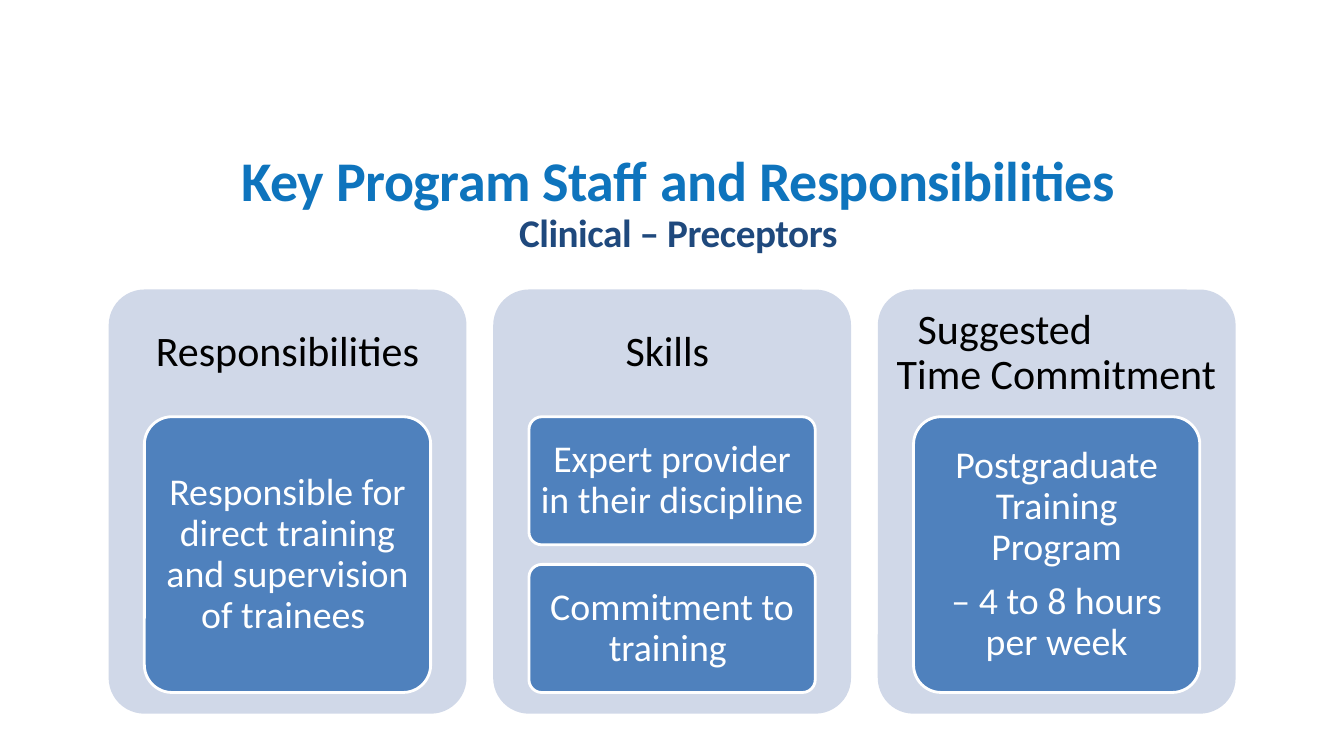
from pptx import Presentation
from pptx.dml.color import RGBColor
from pptx.enum.shapes import MSO_SHAPE
from pptx.enum.text import MSO_ANCHOR, PP_ALIGN
from pptx.util import Pt

ROUND = MSO_SHAPE.ROUNDED_RECTANGLE
MIDDLE, TOP = MSO_ANCHOR.MIDDLE, MSO_ANCHOR.TOP
CENTER, LEFT = PP_ALIGN.CENTER, PP_ALIGN.LEFT
BLUE = RGBColor(0x0E, 0x74, 0xBD)
NAVY = RGBColor(0x1F, 0x49, 0x7D)
PALE = RGBColor(0xD0, 0xD8, 0xE8)
STEEL = RGBColor(0x4F, 0x81, 0xBD)
BLACK = RGBColor(0, 0, 0)
WHITE = RGBColor(0xFF, 0xFF, 0xFF)

PANELS = [
    (["Responsibilities"],
     [["Responsible for direct training and supervision of trainees "]]),
    (["Skills "],
     [["Expert provider in their discipline "], ["Commitment to training "]]),
    (["Suggested", "Time Commitment"],
     [["Postgraduate Training Program", "– 4 to 8 hours per week"]]),
]


def add_run(para, text, size, color, bold=False):
    """Add one styled run to a paragraph."""
    run = para.add_run()
    run.text = text
    font = run.font
    font.name, font.size, font.bold = "Calibri", Pt(size), bold
    font.color.rgb = color
    return run


def set_frame(shape, anchor, side, edge):
    """Set wrapping, anchor and insets, and return the text frame."""
    frame = shape.text_frame
    frame.word_wrap = True
    frame.vertical_anchor = anchor
    frame.margin_left = frame.margin_right = Pt(side)
    frame.margin_top = frame.margin_bottom = Pt(edge)
    return frame


def set_para(para, align=CENTER):
    """Align a paragraph and tighten its lines."""
    para.alignment = align
    para.line_spacing = 0.9


def add_round(slide, box, fill):
    """Draw a rounded box without a line."""
    shape = slide.shapes.add_shape(ROUND, *map(Pt, box))
    shape.adjustments[0] = 0.1
    shape.shadow.inherit = False
    shape.fill.solid()
    shape.fill.fore_color.rgb = fill
    shape.line.fill.background()
    return shape


def add_title(slide, box):
    """Place the title and its subtitle."""
    shape = slide.shapes.add_textbox(*map(Pt, box))
    para = set_frame(shape, TOP, 7.2, 3.6).paragraphs[0]
    set_para(para)
    main = add_run(para, "Key Program Staff and Responsibilities", 40, BLUE, True)
    para.add_line_break()
    sub = add_run(para, "Clinical – Preceptors", 28, NAVY, True)
    for run in (main, sub):
        run.font._element.set("spc", "-30")


def add_head(slide, box, lines):
    """Place a panel heading; a second line hangs to the left."""
    shape = slide.shapes.add_textbox(*map(Pt, box))
    para = set_frame(shape, MIDDLE, 9, 9).paragraphs[0]
    set_para(para, CENTER if len(lines) == 1 else LEFT)
    add_run(para, lines[0], 30, BLACK)
    for line in lines[1:]:
        props = para._p.get_or_add_pPr()
        props.set("marL", str(Pt(2)))
        props.set("indent", str(Pt(15)))
        para.add_line_break()
        add_run(para, line, 30, BLACK)


def add_card(slide, box, texts):
    """Place a card with one paragraph per text."""
    shape = add_round(slide, box, STEEL)
    shape.line.color.rgb = WHITE
    shape.line.width = Pt(2)
    frame = set_frame(shape, MIDDLE, 5.3, 4)
    for i, text in enumerate(texts):
        para = frame.add_paragraph() if i else frame.paragraphs[0]
        set_para(para)
        if i:
            para.space_before = Pt(9.4)
        add_run(para, text, 27, WHITE)


def add_panel(slide, box, head, cards):
    """Place a panel with its heading and evenly stacked cards."""
    left, top, width, height = box
    add_round(slide, box, PALE)
    add_head(slide, (left + 2.5, top + 2.5, width - 5, 0.3 * height - 5), head)
    gap = 14
    tall = (0.65 * height - gap * (len(cards) - 1)) / len(cards)
    for i, texts in enumerate(cards):
        y = top + 0.3 * height + i * (tall + gap)
        add_card(slide, (left + 0.1 * width, y, 0.8 * width, tall), texts)


def main():
    """Build and save the slide."""
    deck = Presentation()
    deck.slide_width, deck.slide_height = Pt(960), Pt(540)
    slide = deck.slides.add_slide(deck.slide_layouts[6])
    add_title(slide, (52.5, 106, 864, 57))
    for i, (head, cards) in enumerate(PANELS):
        add_panel(slide, (77.6 + i * 274.7, 206.8, 255.6, 303), head, cards)
    deck.save("out.pptx")


if __name__ == "__main__":
    main()
